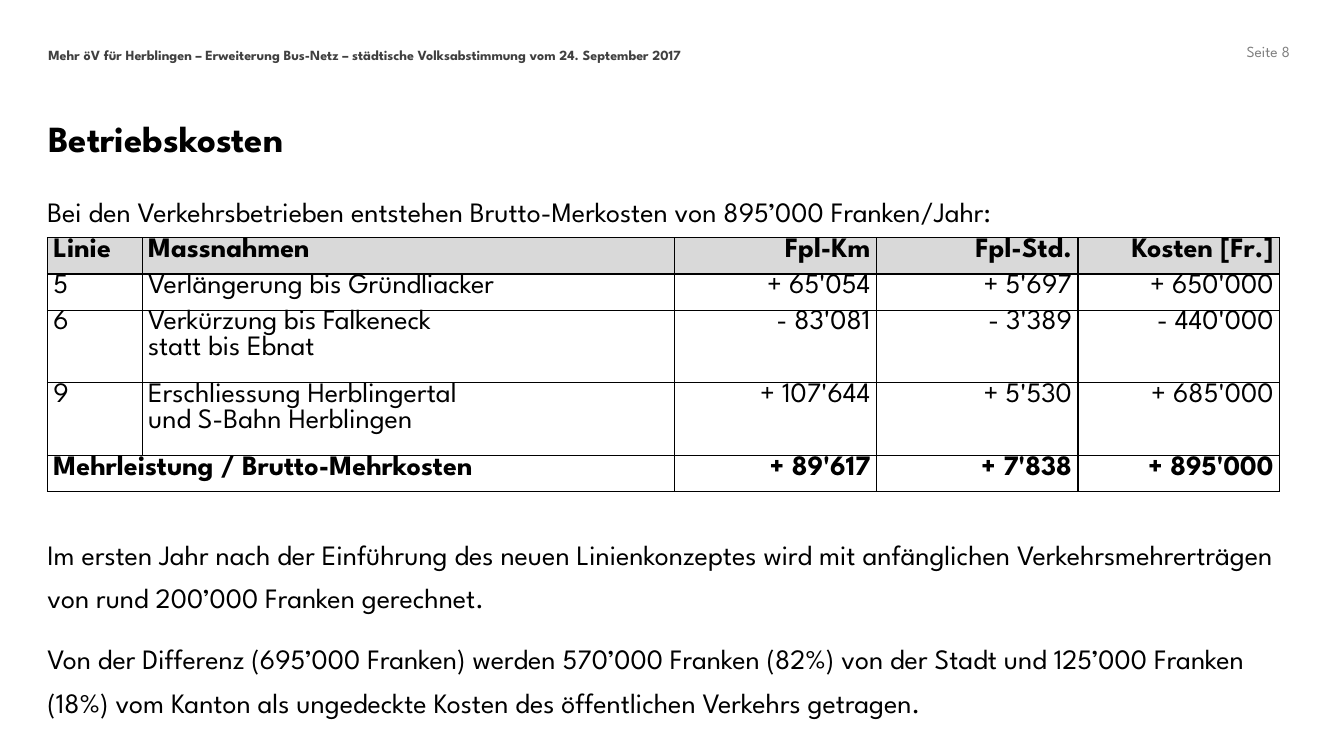
"""Build the slide on yearly operating costs of the bus lines."""
from pptx import Presentation
from pptx.dml.color import RGBColor
from pptx.enum.text import MSO_ANCHOR as Anchor, PP_ALIGN as Align
from pptx.oxml import parse_xml
from pptx.oxml.ns import nsdecls
from pptx.util import Pt

FONT = "League Spartan"
BLACK = "000000"
HEADER_FILL = "D9D9D9"
LINE_SPACING = 1.3

TEXTS = [
    {"box": (34.5, 29.5, 513.5, 12.5), "size": 10, "color": "404040", "bold": True,
     "lines": ["Mehr öV für Herblingen – Erweiterung Bus-Netz – "
               "städtische Volksabstimmung vom 24. September 2017"]},
    {"box": (831, 26, 90.5, 13.5), "size": 11, "color": "808080", "align": Align.RIGHT,
     "lines": ["Seite 8"]},
    {"box": (34.5, 73.5, 890, 64), "size": 26.3, "bold": True, "lines": ["Betriebskosten"]},
    {"box": (33.85, 131.75, 880.5, 38),
     "lines": ["Bei den Verkehrsbetrieben entstehen Brutto-Merkosten von 895’000 Franken/Jahr:"]},
    {"box": (33.85, 376.5, 880.5, 113),
     "lines": ["Im ersten Jahr nach der Einführung des neuen Linienkonzeptes wird mit "
               "anfänglichen Verkehrsmehrerträgen von rund 200’000 Franken gerechnet.",
               "Von der Differenz (695’000 Franken) werden 570’000 Franken (82%) von der "
               "Stadt und 125’000 Franken (18%) vom Kanton als ungedeckte Kosten des "
               "öffentlichen Verkehrs getragen."]},
]

COSTS = [
    ("Linie", "Massnahmen", "Fpl-Km", "Fpl-Std.", "Kosten [Fr.]"),
    ("5", "Verlängerung bis Gründliacker", "+ 65'054", "+ 5'697", "+ 650'000"),
    ("6", "Verkürzung bis Falkeneck\nstatt bis Ebnat", "- 83'081", "- 3'389", "- 440'000"),
    ("9", "Erschliessung Herblingertal\nund S-Bahn Herblingen",
     "+ 107'644", "+ 5'530", "+ 685'000"),
    ("Mehrleistung / Brutto-Mehrkosten", "", "+ 89'617", "+ 7'838", "+ 895'000"),
]
TABLE_LEFT, TABLE_TOP = 33.85, 169.75
COLUMN_WIDTHS = (67.7, 380.5, 144, 144, 144)
LINE_HEIGHT = 25.95
BORDER_WIDTH = 1


def rgb(value):
    return RGBColor.from_string(value)


def write(paragraph, text, formats, size=20, bold=False, color=BLACK):
    paragraph.text = text
    for name, value in formats.items():
        setattr(paragraph, name, value)
    for name, value in {"name": FONT, "size": Pt(size), "bold": bold}.items():
        setattr(paragraph.font, name, value)
    for run in paragraph.runs:
        run.font.color.rgb = rgb(color)


def add_text(slide, box, lines, align=Align.LEFT, **font):
    frame = slide.shapes.add_textbox(*map(Pt, box)).text_frame
    settings = {"word_wrap": True, "vertical_anchor": Anchor.TOP, "margin_left": 0,
                "margin_top": 0, "margin_right": 0, "margin_bottom": 0}
    for name, value in settings.items():
        setattr(frame, name, value)
    formats = {"alignment": align, "line_spacing": LINE_SPACING, "space_after": Pt(12)}
    for index, line in enumerate(lines):
        paragraph = frame.add_paragraph() if index else frame.paragraphs[0]
        write(paragraph, line, formats, **font)


def add_borders(cell):
    properties = cell._tc.get_or_add_tcPr()
    for side in "LRTB":
        properties.append(parse_xml(
            f'<a:ln{side} {nsdecls("a")} w="{Pt(BORDER_WIDTH)}"><a:solidFill>'
            f'<a:srgbClr val="{BLACK}"/></a:solidFill></a:ln{side}>'))


def add_cost_table(slide):
    heights = [LINE_HEIGHT * max(text.count("\n") + 1 for text in row) for row in COSTS]
    frame = slide.shapes.add_table(
        len(COSTS), len(COLUMN_WIDTHS), Pt(TABLE_LEFT), Pt(TABLE_TOP),
        Pt(sum(COLUMN_WIDTHS)), Pt(sum(heights)))
    table = frame.table
    table.first_row = table.horz_banding = False
    for column, width in zip(table.columns, COLUMN_WIDTHS):
        column.width = Pt(width)
    for row, height in zip(table.rows, heights):
        row.height = Pt(height)

    last = len(COSTS) - 1
    table.cell(last, 0).merge(table.cell(last, 1))
    margins = {"margin_left": Pt(4.3), "margin_right": Pt(4.3),
               "margin_top": 0, "margin_bottom": 0}
    for row_index, row in enumerate(COSTS):
        for column_index, text in enumerate(row):
            cell = table.cell(row_index, column_index)
            for name, value in margins.items():
                setattr(cell, name, value)
            add_borders(cell)
            if row_index == 0:
                cell.fill.solid()
                cell.fill.fore_color.rgb = rgb(HEADER_FILL)
            else:
                cell.fill.background()
            align = Align.RIGHT if column_index > 1 else Align.LEFT
            formats = {"alignment": align, "space_after": Pt(1)}
            write(cell.text_frame.paragraphs[0], text, formats, bold=row_index in (0, last))


def main():
    presentation = Presentation()
    presentation.slide_width, presentation.slide_height = Pt(960), Pt(540)
    slide = presentation.slides.add_slide(presentation.slide_layouts[6])
    for text in TEXTS:
        add_text(slide, **text)
    add_cost_table(slide)
    presentation.save("out.pptx")


if __name__ == "__main__":
    main()
